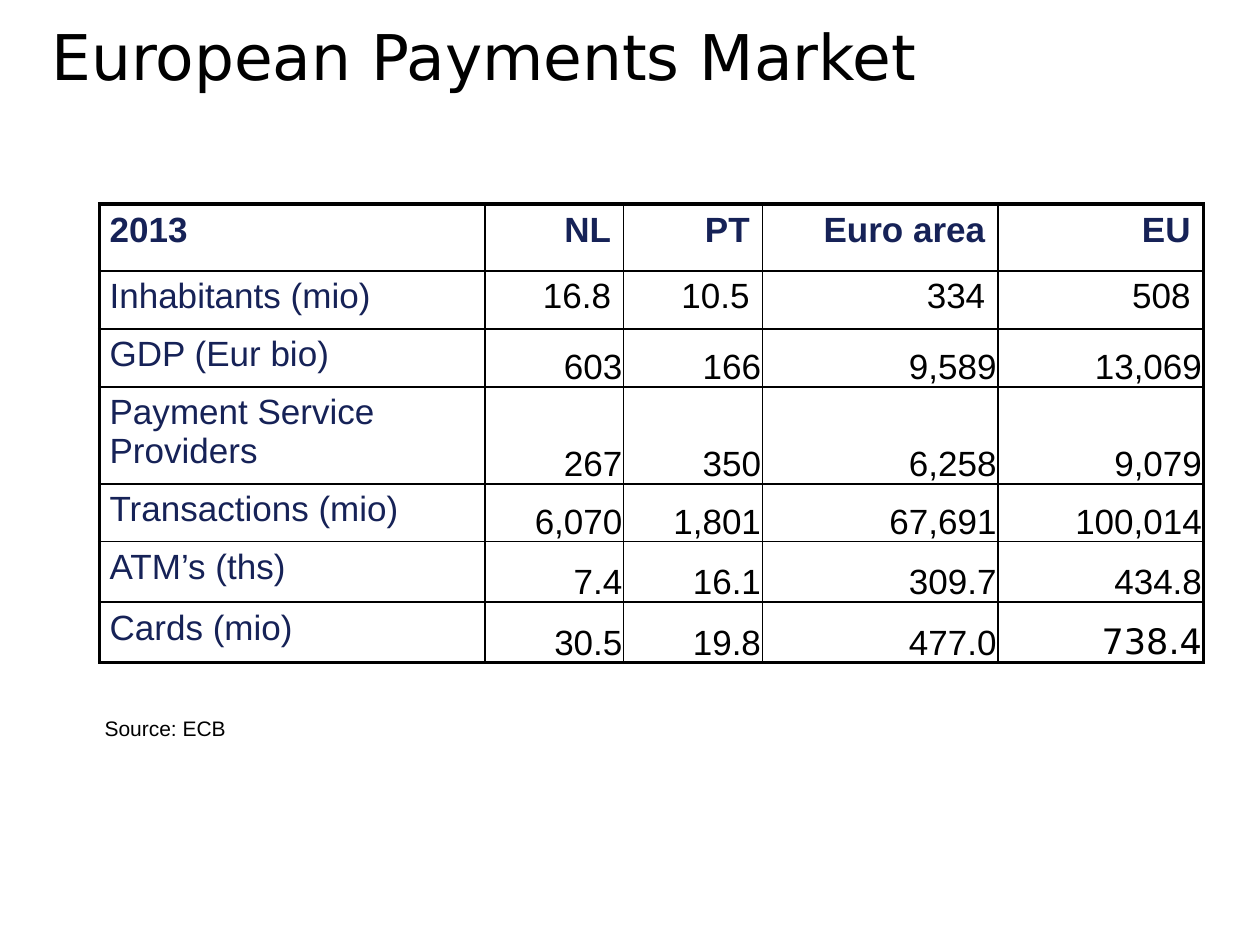
import pptx
import pptx.dml.color
import pptx.enum.text
import pptx.oxml
import pptx.oxml.ns
import pptx.util

Inches, Pt = pptx.util.Inches, pptx.util.Pt
Align, Anchor = pptx.enum.text.PP_ALIGN, pptx.enum.text.MSO_ANCHOR

TITLE = "European Payments Market"
SOURCE = "Source: ECB"
ROWS = [
    ("2013", "NL", "PT", "Euro area", "EU"),
    ("Inhabitants (mio)", "16.8", "10.5", "334", "508"),
    ("GDP (Eur bio)", "603", "166", "9,589", "13,069"),
    ("Payment Service Providers", "267", "350", "6,258", "9,079"),
    ("Transactions (mio)", "6,070", "1,801", "67,691", "100,014"),
    ("ATM’s (ths)", "7.4", "16.1", "309.7", "434.8"),
    ("Cards (mio)", "30.5", "19.8", "477.0", "738.4"),
]
COLUMN_WIDTHS = [3.06, 1.1, 1.1, 1.87, 1.63]
ROW_HEIGHTS = [0.53, 0.46, 0.46, 0.77, 0.46, 0.48, 0.48]

BLACK, NAVY, WHITE = "000000", "162257", "FFFFFF"
SANS, TITLE_FONT = "Arial", "DejaVu Sans"
THIN, THICK = 1, 2.25
SIDES = ("left", "top", "right", "bottom")
ROOMY = (0.08, 0.05, 0.1, 0.05)
TIGHT = (0.01, 0.01, 0.01, 0)


def rgb(value):
    return pptx.dml.color.RGBColor.from_string(value)


def set_margins(target, margins):
    for side, margin in zip(SIDES, margins):
        setattr(target, f"margin_{side}", Inches(margin))


def write(para, text, color=BLACK, **format_values):
    span = para.add_run()
    span.text = text
    span.font.color.rgb = rgb(color)
    for name, value in format_values.items():
        setattr(span.font, name, value)


def add_text(page, place, margins):
    """Add an empty text box and return its first paragraph."""
    frame = page.shapes.add_textbox(*map(Inches, place)).text_frame
    frame.word_wrap = True
    set_margins(frame, margins)
    return frame.paragraphs[0]


def set_borders(cell, widths):
    """Draw black cell borders; widths are points by side letter, in schema order."""
    properties = cell._tc.get_or_add_tcPr()
    for index, (side, width) in enumerate(widths.items()):
        properties.insert(index, pptx.oxml.parse_xml(
            f'<a:ln{side} {pptx.oxml.ns.nsdecls("a")} w="{Pt(width)}">'
            f'<a:solidFill><a:srgbClr val="{BLACK}"/></a:solidFill></a:ln{side}>'))


def add_market_table(page):
    last_row, last_column = len(ROWS) - 1, len(COLUMN_WIDTHS) - 1
    table = page.shapes.add_table(
        len(ROWS), len(COLUMN_WIDTHS), Inches(0.79), Inches(1.62),
        Inches(sum(COLUMN_WIDTHS)), Inches(sum(ROW_HEIGHTS))).table
    table.first_row = table.horz_banding = False
    for column, width in zip(table.columns, COLUMN_WIDTHS):
        column.width = Inches(width)
    for row, height in zip(table.rows, ROW_HEIGHTS):
        row.height = Inches(height)

    for r, values in enumerate(ROWS):
        for c, text in enumerate(values):
            cell = table.cell(r, c)
            is_label, is_header = c == 0, r == 0
            is_tight = r > 1 and not is_label
            is_total = (r, c) == (last_row, last_column)
            cell.fill.solid()
            cell.fill.fore_color.rgb = rgb(WHITE)
            cell.vertical_anchor = Anchor.BOTTOM if is_tight else Anchor.TOP
            set_margins(cell, TIGHT if is_tight else ROOMY)
            set_borders(cell, {
                "L": THICK if is_label else THIN,
                "R": THICK if c == last_column else THIN,
                "T": THICK if is_header else THIN,
                "B": THICK if r == last_row else THIN,
            })
            para = cell.text_frame.paragraphs[0]
            para.alignment = Align.LEFT if is_label else Align.RIGHT
            write(para, text, NAVY if is_label or is_header else BLACK,
                  size=Pt(20), bold=is_header, name=TITLE_FONT if is_total else SANS)


def main():
    deck = pptx.Presentation()
    deck.slide_width, deck.slide_height = Inches(10), Inches(7.5)
    page = deck.slides.add_slide(deck.slide_layouts[6])

    title = add_text(page, (0.41, 0.22, 8.65, 1.21), (0, 0, 0, 0))
    title.line_spacing = Pt(37.5)
    write(title, TITLE, size=Pt(36), name=TITLE_FONT)

    source = add_text(page, (0.75, 5.64, 1.91, 0.26), (0.08, 0.04, 0.08, 0.04))
    write(source, SOURCE, size=Pt(12), name=SANS)

    add_market_table(page)
    deck.save("out.pptx")


if __name__ == "__main__":
    main()
